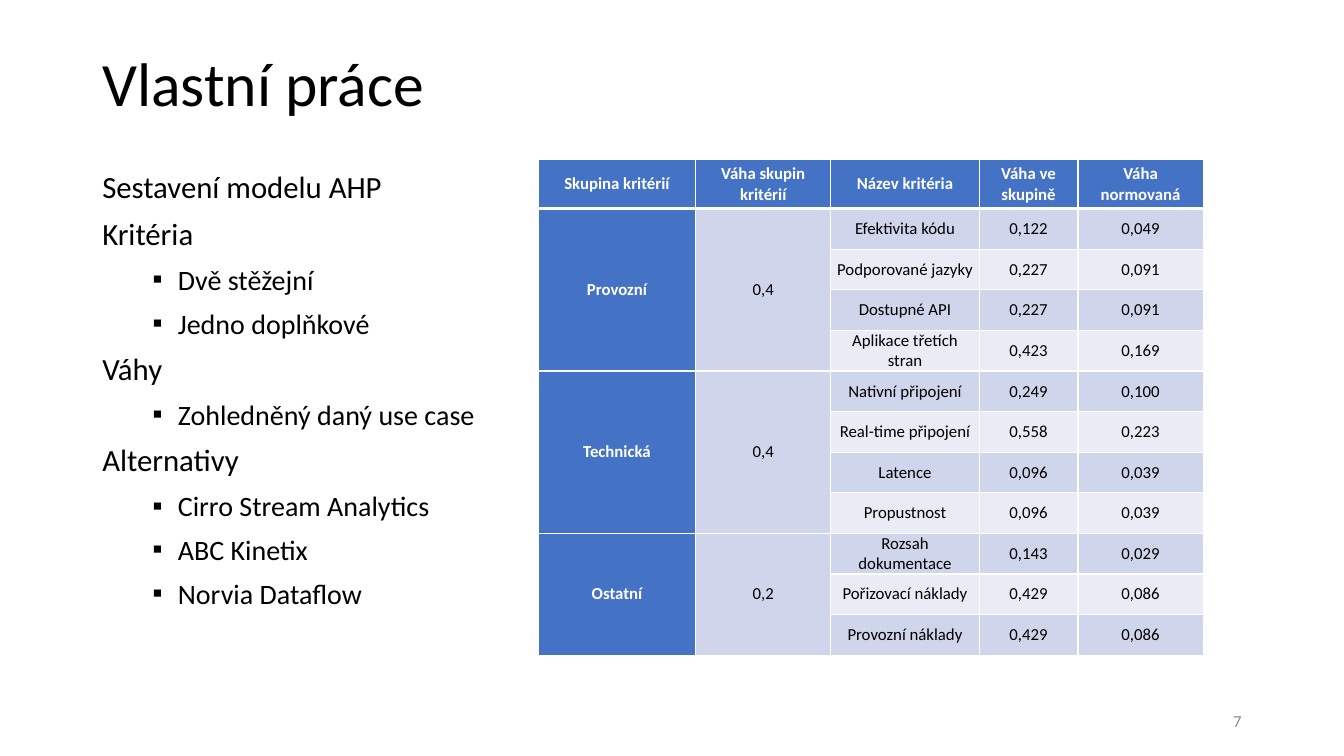
from lxml.etree import SubElement
from pptx import Presentation
from pptx.dml.color import RGBColor
from pptx.enum.text import MSO_ANCHOR, PP_ALIGN
from pptx.oxml.ns import qn
from pptx.util import Pt

BLACK = RGBColor(0, 0, 0)
WHITE = RGBColor(255, 255, 255)
GRAY = RGBColor(0x8C, 0x8C, 0x8C)
BLUE = RGBColor(0x44, 0x72, 0xC4)
BAND = RGBColor(0xCF, 0xD5, 0xEA)
PALE = RGBColor(0xE9, 0xEB, 0xF5)

HEADS = ["Skupina kritérií", "Váha skupin kritérií", "Název kritéria",
         "Váha ve skupině", "Váha normovaná"]
GROUPS = [
    ("Provozní", "0,4", [
        ("Efektivita kódu", "0,122", "0,049"),
        ("Podporované jazyky", "0,227", "0,091"),
        ("Dostupné API", "0,227", "0,091"),
        ("Aplikace třetích stran", "0,423", "0,169")]),
    ("Technická", "0,4", [
        ("Nativní připojení", "0,249", "0,100"),
        ("Real-time připojení", "0,558", "0,223"),
        ("Latence", "0,096", "0,039"),
        ("Propustnost", "0,096", "0,039")]),
    ("Ostatní", "0,2", [
        ("Rozsah dokumentace", "0,143", "0,029"),
        ("Pořizovací náklady", "0,429", "0,086"),
        ("Provozní náklady", "0,429", "0,086")]),
]
POINTS = [
    ("Sestavení modelu AHP", []),
    ("Kritéria", ["Dvě stěžejní", "Jedno doplňkové"]),
    ("Váhy", ["Zohledněný daný use case"]),
    ("Alternativy", ["Cirro Stream Analytics", "ABC Kinetix", "Norvia Dataflow"]),
]
WIDTHS = [112.5, 96.5, 106, 70.5, 89.5]
HEAD_H, ROW_H = 35, 29
TITLE = {"line_spacing": 0.9}
TOPIC = {"line_spacing": 0.9, "space_before": Pt(10)}
ITEM = {"line_spacing": 1.1, "space_before": Pt(5), "level": 1}


def put(item, form):
    for name, value in form.items():
        setattr(item, name, value)


def write(para, text, size, color, form, bold=False):
    put(para, form)
    run = para.add_run()
    run.text = text
    put(run.font, {"name": "Calibri", "size": Pt(size), "bold": bold})
    run.font.color.rgb = color


def add_box(slide, area, anchor):
    frame = slide.shapes.add_textbox(*map(Pt, area)).text_frame
    put(frame, {"word_wrap": True, "vertical_anchor": anchor})
    return frame


def add_bullet(para):
    props = para._p.get_or_add_pPr()
    props.set("marL", str(Pt(54)))
    props.set("indent", str(-Pt(18)))
    SubElement(props, qn("a:buFont"), typeface="Calibri")
    SubElement(props, qn("a:buChar"), char="▪")


def add_list(slide, area):
    frame = add_box(slide, area, MSO_ANCHOR.TOP)
    para = frame.paragraphs[0]
    for topic, items in POINTS:
        if para is None:
            para = frame.add_paragraph()
        write(para, topic, 22, BLACK, TOPIC)
        for text in items:
            para = frame.add_paragraph()
            write(para, text, 20, BLACK, ITEM)
            add_bullet(para)
        para = None


def add_edges(cell, base):
    props = cell._tc.get_or_add_tcPr()
    for side, width in {"L": 1, "R": 1, "T": 1, "B": base}.items():
        line = SubElement(props, qn(f"a:ln{side}"), w=str(Pt(width)))
        fill = SubElement(line, qn("a:solidFill"))
        SubElement(fill, qn("a:srgbClr"), val=str(WHITE))


def fill_cell(cell, text, fill, side, edge=0):
    put(cell, {"vertical_anchor": MSO_ANCHOR.MIDDLE,
               "margin_left": Pt(side), "margin_right": Pt(side),
               "margin_top": Pt(edge), "margin_bottom": Pt(edge)})
    cell.fill.solid()
    cell.fill.fore_color.rgb = fill
    strong = fill == BLUE
    write(cell.text_frame.paragraphs[0], text, 12, WHITE if strong else BLACK,
          {"alignment": PP_ALIGN.CENTER}, strong)


def add_grid(slide, left, top):
    count = sum(len(rows) for _, _, rows in GROUPS)
    area = left, top, sum(WIDTHS), HEAD_H + count * ROW_H
    grid = slide.shapes.add_table(count + 1, len(HEADS), *map(Pt, area)).table
    put(grid, {"first_row": False, "horz_banding": False})
    for col, width in zip(grid.columns, WIDTHS):
        col.width = Pt(width)
    for row, line in enumerate(grid.rows):
        line.height = Pt(ROW_H if row else HEAD_H)
        for cell in line.cells:
            add_edges(cell, 1 if row else 3)
    for col, head in enumerate(HEADS):
        fill_cell(grid.cell(0, col), head, BLUE, 3)
    row = 1
    for name, weight, rows in GROUPS:
        last = row + len(rows) - 1
        for col, text, fill in ((0, name, BLUE), (1, weight, BAND)):
            grid.cell(row, col).merge(grid.cell(last, col))
            fill_cell(grid.cell(row, col), text, fill, 7.2, 3.6)
        for values in rows:
            for col, text in enumerate(values, 2):
                fill_cell(grid.cell(row, col), text, BAND if row % 2 else PALE,
                          3 if col == 2 else 5)
            row += 1


def main():
    deck = Presentation()
    put(deck, {"slide_width": Pt(960), "slide_height": Pt(540)})
    slide = deck.slides.add_slide(deck.slide_layouts[6])
    title = add_box(slide, (66, 9.5, 828, 104.5), MSO_ANCHOR.MIDDLE)
    write(title.paragraphs[0], "Vlastní práce", 44, BLACK, TITLE)
    add_list(slide, (66, 119, 282, 343.5))
    add_grid(slide, 384.5, 114)
    page = add_box(slide, (678, 500.5, 216, 29), MSO_ANCHOR.MIDDLE)
    write(page.paragraphs[0], "7", 12, GRAY, {"alignment": PP_ALIGN.RIGHT})
    deck.save("out.pptx")


if __name__ == "__main__":
    main()
